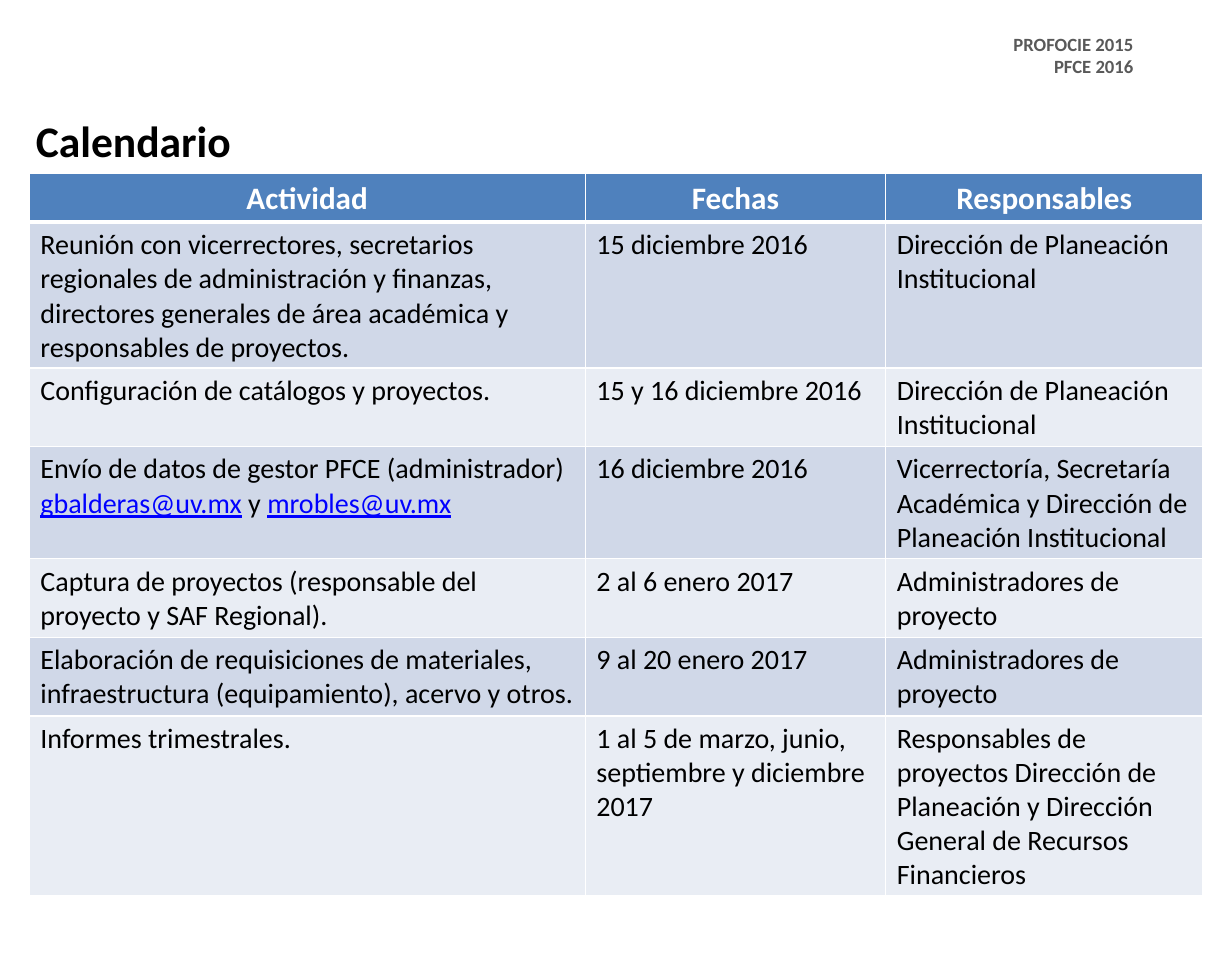
from pptx import Presentation
from pptx.dml.color import RGBColor
from pptx.enum.text import MSO_ANCHOR as Anchor, MSO_AUTO_SIZE as AutoSize, PP_ALIGN as Align
from pptx.oxml import parse_xml
from pptx.oxml.ns import nsdecls
from pptx.util import Inches, Pt

TITLE = {"size": Pt(28), "bold": True, "color": "000000"}
PROGRAM = {"size": Pt(12), "bold": True, "color": "595959"}
HEADING = {"size": Pt(20), "bold": True, "color": "FFFFFF"}
BODY = {"size": Pt(18), "bold": False, "color": "000000"}
EMAIL = {**BODY, "underline": True, "color": "0000FF"}

HEADER_FILL = "4F81BD"
BAND_FILLS = ["D0D8E8", "E9EDF4"]

HEADINGS = ["Actividad", "Fechas", "Responsables"]
COLUMN_WIDTHS = [45.13, 24.39, 25.75]
ROW_HEIGHT = 4.82
ACTIVITIES = [
    ["Reunión con vicerrectores, secretarios regionales de administración y finanzas, "
     "directores generales de área académica y responsables de proyectos.",
     "15 diciembre 2016", "Dirección de Planeación Institucional"],
    ["Configuración de catálogos y proyectos.",
     "15 y 16 diciembre 2016", "Dirección de Planeación Institucional"],
    [[("Envío de datos de gestor PFCE (administrador) ", BODY), ("gbalderas@uv.mx", EMAIL),
      (" y ", BODY), ("mrobles@uv.mx", EMAIL)],
     "16 diciembre 2016",
     "Vicerrectoría, Secretaría Académica y Dirección de Planeación Institucional"],
    ["Captura de proyectos (responsable del proyecto y SAF Regional).",
     "2 al 6 enero 2017", "Administradores de proyecto"],
    ["Elaboración de requisiciones de materiales, infraestructura (equipamiento), "
     "acervo y otros.",
     "9 al 20 enero 2017", "Administradores de proyecto"],
    ["Informes trimestrales.",
     "1 al 5 de marzo, junio, septiembre y diciembre 2017",
     "Responsables de proyectos Dirección de Planeación y Dirección General de Recursos "
     "Financieros"],
]


def rgb(color):
    return RGBColor.from_string(color)


class CalendarSlide:
    """Places elements on a grid of 100 columns by 100 rows."""

    font_name = "Calibri"

    def __init__(self, presentation):
        self.column = presentation.slide_width / 100
        self.row = presentation.slide_height / 100
        self.slide = presentation.slides.add_slide(presentation.slide_layouts[5])

    def box(self, left, top, width, height):
        return (round(left * self.column), round(top * self.row),
                round(width * self.column), round(height * self.row))

    def add_runs(self, paragraph, content, style, align=Align.LEFT):
        paragraph.alignment = align
        runs = [(content, style)] if isinstance(content, str) else content
        for text, run_style in runs:
            run = paragraph.add_run()
            run.text = text
            run.font.name = self.font_name
            for name, value in run_style.items():
                if name == "color":
                    run.font.color.rgb = rgb(value)
                else:
                    setattr(run.font, name, value)

    def fill_frame(self, shape, lines, style, align):
        frame = shape.text_frame
        frame.word_wrap = True
        frame.auto_size = AutoSize.SHAPE_TO_FIT_TEXT
        frame.vertical_anchor = Anchor.TOP
        for index, line in enumerate(lines):
            paragraph = frame.add_paragraph() if index else frame.paragraphs[0]
            self.add_runs(paragraph, line, style, align)

    def title(self, text, *place):
        title = self.slide.shapes.title
        title.left, title.top, title.width, title.height = self.box(*place)
        self.fill_frame(title, [text], TITLE, Align.LEFT)

    def text(self, lines, style, align, *place):
        shape = self.slide.shapes.add_textbox(*self.box(*place))
        self.fill_frame(shape, lines, style, align)

    def borders(self, cell, **widths):
        properties = cell._tc.get_or_add_tcPr()
        for index, side in enumerate("LRTB"):
            line = parse_xml(
                f'<a:ln{side} {nsdecls("a")} w="{Pt(widths.get(side, 1))}">'
                '<a:solidFill><a:srgbClr val="FFFFFF"/></a:solidFill>'
                f'</a:ln{side}>')
            properties.insert(index, line)

    def cell(self, cell, content, style, align, fill, **widths):
        cell.fill.solid()
        cell.fill.fore_color.rgb = rgb(fill)
        self.borders(cell, **widths)
        self.add_runs(cell.text_frame.paragraphs[0], content, style, align)

    def table(self, headings, records, left, top):
        row_count = len(records) + 1
        place = self.box(left, top, sum(COLUMN_WIDTHS), ROW_HEIGHT * row_count)
        table = self.slide.shapes.add_table(row_count, len(headings), *place).table
        for column, width in zip(table.columns, COLUMN_WIDTHS):
            column.width = round(width * self.column)
        for index, heading in enumerate(headings):
            self.cell(table.cell(0, index), heading, HEADING, Align.CENTER, HEADER_FILL, B=3)
        for row, record in enumerate(records, 1):
            fill = BAND_FILLS[(row - 1) % 2]
            for index, content in enumerate(record):
                self.cell(table.cell(row, index), content, BODY, Align.LEFT, fill,
                          T=3 if row == 1 else 1)


def main():
    presentation = Presentation()
    presentation.slide_width = Inches(10.99)
    presentation.slide_height = Inches(8.51)
    calendar = CalendarSlide(presentation)

    # Title and schedule
    calendar.title("Calendario", 2, 11.4, 80.25, 6.7)
    calendar.table(HEADINGS, ACTIVITIES, 2.37, 18.21)

    # Program names in the top right corner
    calendar.text(["PROFOCIE 2015", "PFCE 2016"], PROGRAM, Align.RIGHT,
                  67.15, 2.82, 25.75, 8.34)

    presentation.save("out.pptx")


if __name__ == "__main__":
    main()
